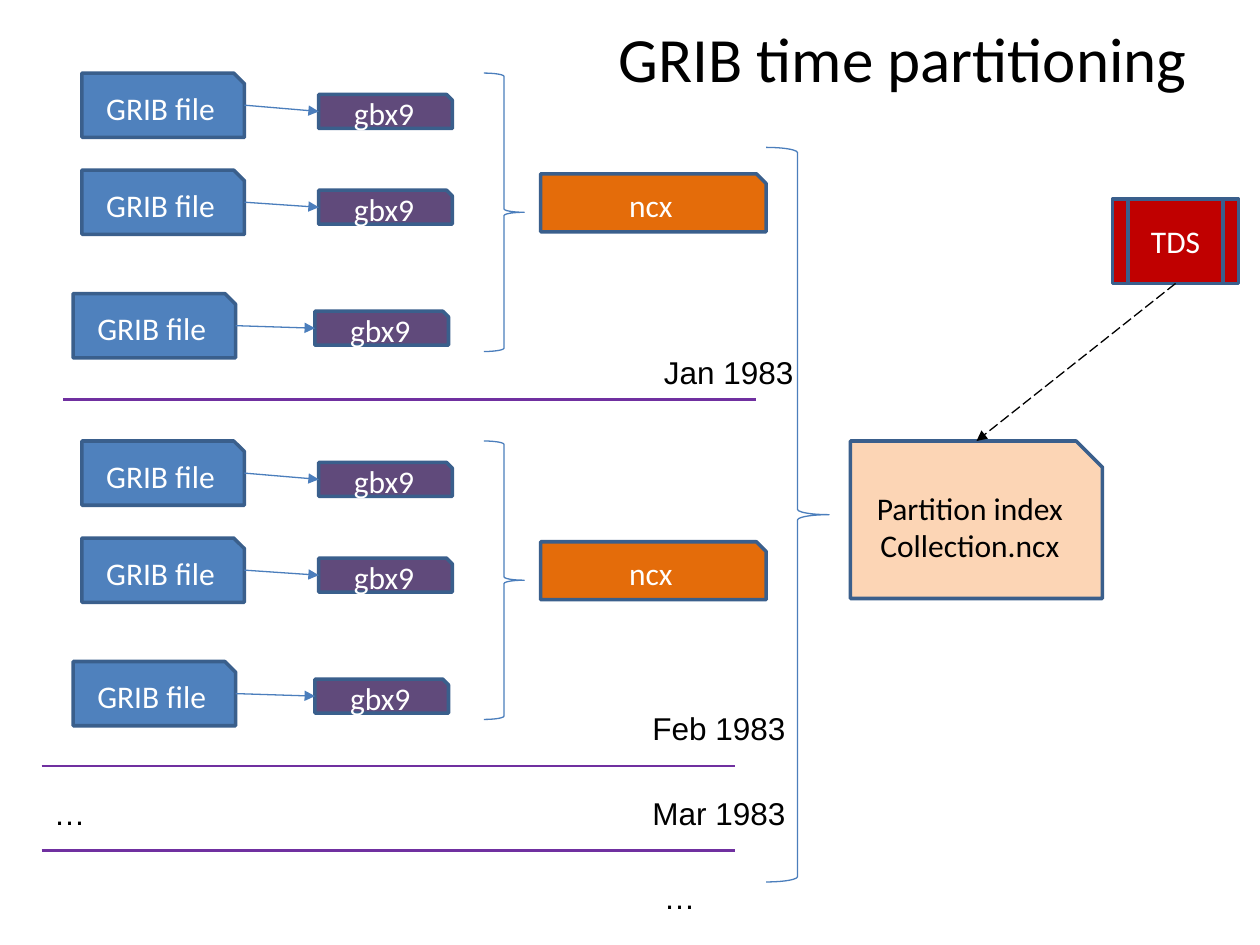
from dataclasses import dataclass

import pptx
import pptx.dml.color
import pptx.enum.dml
import pptx.enum.shapes
import pptx.enum.text
import pptx.oxml
import pptx.oxml.ns
import pptx.util

Inches = pptx.util.Inches
Pt = pptx.util.Pt
SHAPES = pptx.enum.shapes.MSO_SHAPE
ALIGN = pptx.enum.text.PP_ALIGN
TOP, LEFT, BOTTOM, RIGHT = range(4)


@dataclass(frozen=True)
class Theme:
    file: str = "4F81BD"
    index: str = "604A7B"
    month_index: str = "E46C0A"
    partition: str = "FCD5B5"
    server: str = "C00000"
    outline: str = "3A5F8C"
    link: str = "4B7EBC"
    divider: str = "7030A0"
    dark: str = "000000"
    light: str = "FFFFFF"
    body_font: str = "Calibri"
    label_font: str = "Arial"
    title_size: int = 36
    text_size: int = 18
    thin: float = 0.75
    rule: float = 1.5
    border: float = 2


THEME = Theme()


def rgb(value):
    return pptx.dml.color.RGBColor.from_string(value)


def write(frame, lines, font, size, color, align):
    for number, line in enumerate(lines):
        para = frame.paragraphs[0] if number == 0 else frame.add_paragraph()
        para.alignment = align
        span = para.add_run()
        span.text = line
        span.font.name = font
        span.font.size = Pt(size)
        span.font.color.rgb = rgb(color)


def add_node(page, kind, box, lines, fill, color=THEME.light):
    """Add a filled, outlined shape with centred text."""
    node = page.shapes.add_shape(kind, *map(Inches, box))
    node.shadow.inherit = False
    node.fill.solid()
    node.fill.fore_color.rgb = rgb(fill)
    node.line.color.rgb = rgb(THEME.outline)
    node.line.width = Pt(THEME.border)
    node.text_frame.vertical_anchor = pptx.enum.text.MSO_ANCHOR.MIDDLE
    write(node.text_frame, lines, THEME.body_font, THEME.text_size, color, ALIGN.CENTER)
    return node


def add_brace(page, box):
    brace = page.shapes.add_shape(SHAPES.RIGHT_BRACE, *map(Inches, box))
    brace.shadow.inherit = False
    brace.fill.background()
    brace.line.color.rgb = rgb(THEME.link)
    brace.line.width = Pt(THEME.thin)


def add_line(page, start, end, color, width):
    line = page.shapes.add_connector(
        pptx.enum.shapes.MSO_CONNECTOR.STRAIGHT, *map(Inches, (*start, *end)))
    line.line.color.rgb = rgb(color)
    line.line.width = Pt(width)
    line._element.spPr.append(pptx.oxml.parse_xml(
        f"<a:effectLst {pptx.oxml.ns.nsdecls('a')}/>"))
    return line


def add_arrow(page, source, source_side, target, target_side, color, dashed=False):
    arrow = add_line(page, (0, 0), (0, 0), color, THEME.thin)
    arrow.begin_connect(source, source_side)
    arrow.end_connect(target, target_side)
    if dashed:
        arrow.line.dash_style = pptx.enum.dml.MSO_LINE.LONG_DASH
    arrow.line._get_or_add_ln().append(pptx.oxml.parse_xml(
        f"<a:tailEnd {pptx.oxml.ns.nsdecls('a')} type='triangle'/>"))


def add_label(page, box, text, wrap=False):
    label = page.shapes.add_textbox(*map(Inches, box))
    frame = label.text_frame
    frame.word_wrap = wrap
    frame.auto_size = pptx.enum.text.MSO_AUTO_SIZE.SHAPE_TO_FIT_TEXT
    write(frame, [text], THEME.label_font, THEME.text_size, THEME.dark, ALIGN.LEFT)


def set_title(page, box, text):
    title = page.shapes.title
    title.left, title.top, title.width, title.height = map(Inches, box)
    title.text_frame.vertical_anchor = pptx.enum.text.MSO_ANCHOR.MIDDLE
    write(title.text_frame, [text], THEME.body_font, THEME.title_size,
          THEME.dark, ALIGN.CENTER)


def add_month(page, box):
    """Add one month: files with their indexes, braced into an ncx file."""
    left, top, width, height = box
    for shift, drop, index_shift, index_drop in (
        (0.07, 0, 1.95, 0.17), (0.07, 0.77, 1.95, 0.93), (0, 1.75, 1.92, 1.89),
    ):
        file = add_node(page, SHAPES.SNIP_1_RECTANGLE,
                        (left + shift, top + drop, 1.29, 0.51),
                        ["GRIB file"], THEME.file)
        index = add_node(page, SHAPES.SNIP_1_RECTANGLE,
                         (left + index_shift, top + index_drop, 1.06, 0.27),
                         ["gbx9"], THEME.index)
        add_arrow(page, file, RIGHT, index, LEFT, THEME.link)
    add_brace(page, (left + 3.26, top, 0.32, height))
    ncx_width = 1.79
    add_node(page, SHAPES.SNIP_1_RECTANGLE,
             (left + width - ncx_width, top + 0.8, ncx_width, 0.46),
             ["ncx"], THEME.month_index)


def add_calendar(page):
    """Add the dividers and labels that separate the months."""
    for left, top in ((0.5, 3.17), (0.33, 6.08), (0.33, 6.75)):
        add_line(page, (left, top), (left + 5.5, top), THEME.divider, THEME.rule)
    add_label(page, (0.33, 6.25, 1.83, 0.4), "…", wrap=True)
    for left, top, width, text in (
        (5.17, 2.75, 1.24, "Jan 1983"),
        (5.08, 5.58, 1.27, "Feb 1983"),
        (5.08, 6.25, 1.27, "Mar 1983"),
        (5.17, 6.92, 0.45, "…"),
    ):
        add_label(page, (left, top, width, 0.4), text)


def add_collection(page, box):
    """Add the brace over all months, the partition index and its server."""
    left, top, width, height = box
    add_brace(page, (left, top, 0.5, height))
    partition = add_node(page, SHAPES.SNIP_1_RECTANGLE,
                         (left + 0.67, top + 2.33, 2, 1.25),
                         ["Partition index", "Collection.ncx"],
                         THEME.partition, THEME.dark)
    server = add_node(page, SHAPES.FLOWCHART_PREDEFINED_PROCESS,
                      (left + width - 1, top + 0.41, 1, 0.67),
                      ["TDS"], THEME.server)
    add_arrow(page, server, BOTTOM, partition, TOP, THEME.dark, dashed=True)


def main():
    deck = pptx.Presentation()
    deck.slide_width, deck.slide_height = Inches(10), Inches(7.5)
    page = deck.slides.add_slide(deck.slide_layouts[5])
    set_title(page, (3.75, -0.17, 6.83, 1.25), "GRIB time partitioning")
    for top in (0.58, 3.5):
        add_month(page, (0.58, top, 5.5, 2.21))
    add_calendar(page)
    add_collection(page, (6.08, 1.17, 3.75, 5.83))
    deck.save("out.pptx")


if __name__ == "__main__":
    main()
